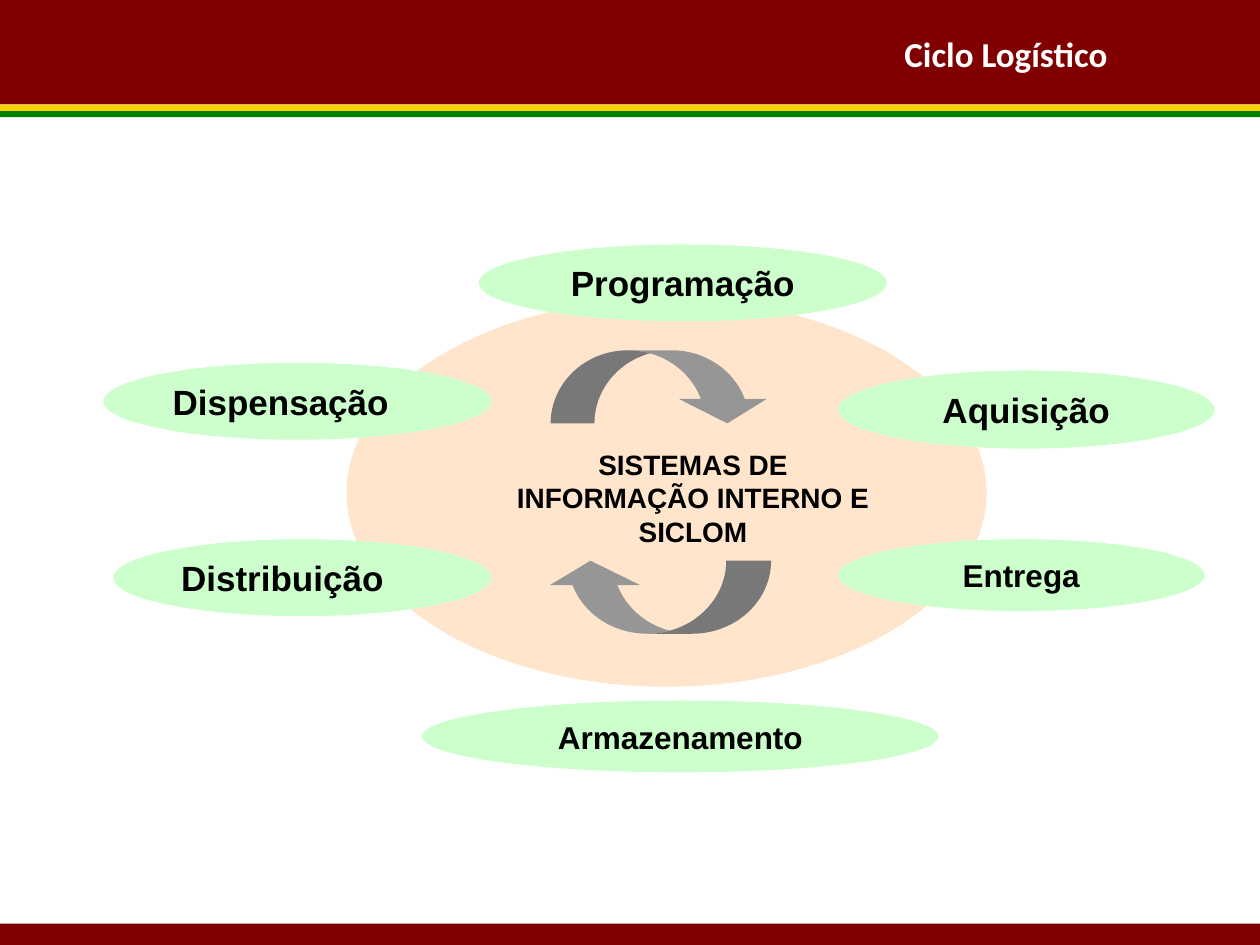
"""Build the logistics cycle slide."""
import lxml.etree
import pptx
import pptx.dml.color
import pptx.enum.shapes
import pptx.enum.text
import pptx.oxml.ns
import pptx.util

Inches = pptx.util.Inches
SHAPE = pptx.enum.shapes.MSO_SHAPE
ALIGN = pptx.enum.text.PP_ALIGN
ANCHOR = pptx.enum.text.MSO_ANCHOR

COLORS = {
    "maroon": "800000", "green": "008000", "yellow": "FFD200",
    "peach": "FFCC99", "mint": "CCFFCC", "gray": "969696",
    "black": "000000", "white": "FFFFFF",
}
TITLE = "Ciclo Logístico"
CENTER = "SISTEMAS DE INFORMAÇÃO INTERNO E SICLOM"
BANDS = [
    (0, 0.83, "maroon"),
    (0.88, 0.05, "green"),
    (0.83, 0.05, "yellow"),
    (7.33, 0.17, "maroon"),
]
ARROWS = [
    (SHAPE.CURVED_DOWN_ARROW, (4.37, 2.78, 1.75, 0.58), (0.6, 1.2, 0.333), False),
    (SHAPE.CURVED_UP_ARROW, (4.33, 4.45, 1.79, 0.58), (0.614, 1.229, 0.333), True),
]
STAGES = [
    ("Programação", (3.8, 1.94, 3.24, 0.61), 20, ALIGN.CENTER),
    ("Aquisição", (6.65, 2.94, 2.99, 0.62), 20, ALIGN.CENTER),
    ("Entrega", (6.65, 4.28, 2.91, 0.57), 18, ALIGN.CENTER),
    ("Armazenamento", (3.35, 5.56, 4.1, 0.57), 18, ALIGN.CENTER),
    ("Dispensação", (0.82, 2.88, 3.08, 0.61), 20, ALIGN.LEFT),
    ("Distribuição", (0.9, 4.28, 3, 0.61), 20, ALIGN.LEFT),
]


def rgb(color):
    return pptx.dml.color.RGBColor.from_string(COLORS[color])


def add_filled(slide, kind, box, color):
    shape = slide.shapes.add_shape(kind, *map(Inches, box))
    shape.shadow.inherit = False
    shape.fill.solid()
    shape.fill.fore_color.rgb = rgb(color)
    shape.line.fill.background()
    return shape


def write(shape, text, size, align, anchor, font="Arial", color="black"):
    frame = shape.text_frame
    frame.text = text
    frame.word_wrap = True
    frame.auto_size = pptx.enum.text.MSO_AUTO_SIZE.NONE
    frame.vertical_anchor = anchor
    paragraph = frame.paragraphs[0]
    paragraph.alignment = align
    paragraph.font.name = font
    paragraph.font.size = pptx.util.Pt(size)
    paragraph.font.bold = True
    paragraph.font.color.rgb = rgb(color)


def main():
    deck = pptx.Presentation()
    deck.slide_width, deck.slide_height = Inches(10), Inches(7.5)
    slide = deck.slides.add_slide(deck.slide_layouts[5])

    for top, height, color in BANDS:
        add_filled(slide, SHAPE.RECTANGLE, (0, top, 10, height), color)

    hub = add_filled(slide, SHAPE.OVAL, (2.75, 2.37, 5.08, 3.08), "peach")
    qn = pptx.oxml.ns.qn
    hub_color = hub.element.spPr.find(qn("a:solidFill")).find(qn("a:srgbClr"))
    lxml.etree.SubElement(hub_color, qn("a:alpha"), val="50000")

    center = slide.shapes.add_textbox(*map(Inches, (3.96, 3.5, 3.08, 0.91)))
    write(center, CENTER, 16, ALIGN.CENTER, ANCHOR.TOP)

    for kind, box, adjustments, flipped in ARROWS:
        arrow = add_filled(slide, kind, box, "gray")
        for index, value in enumerate(adjustments):
            arrow.adjustments[index] = value
        if flipped:
            arrow.element.spPr.find(qn("a:xfrm")).set("flipH", "1")

    for label, box, size, align in STAGES:
        stage = add_filled(slide, SHAPE.OVAL, box, "mint")
        write(stage, label, size, align, ANCHOR.MIDDLE)

    title = slide.shapes.title
    title.left, title.top, title.width, title.height = map(Inches, (0.56, 0.21, 8.33, 0.44))
    write(title, TITLE, 20, ALIGN.RIGHT, ANCHOR.TOP, "Calibri", "white")
    title.element.getparent().append(title.element)

    deck.save("out.pptx")


if __name__ == "__main__":
    main()
